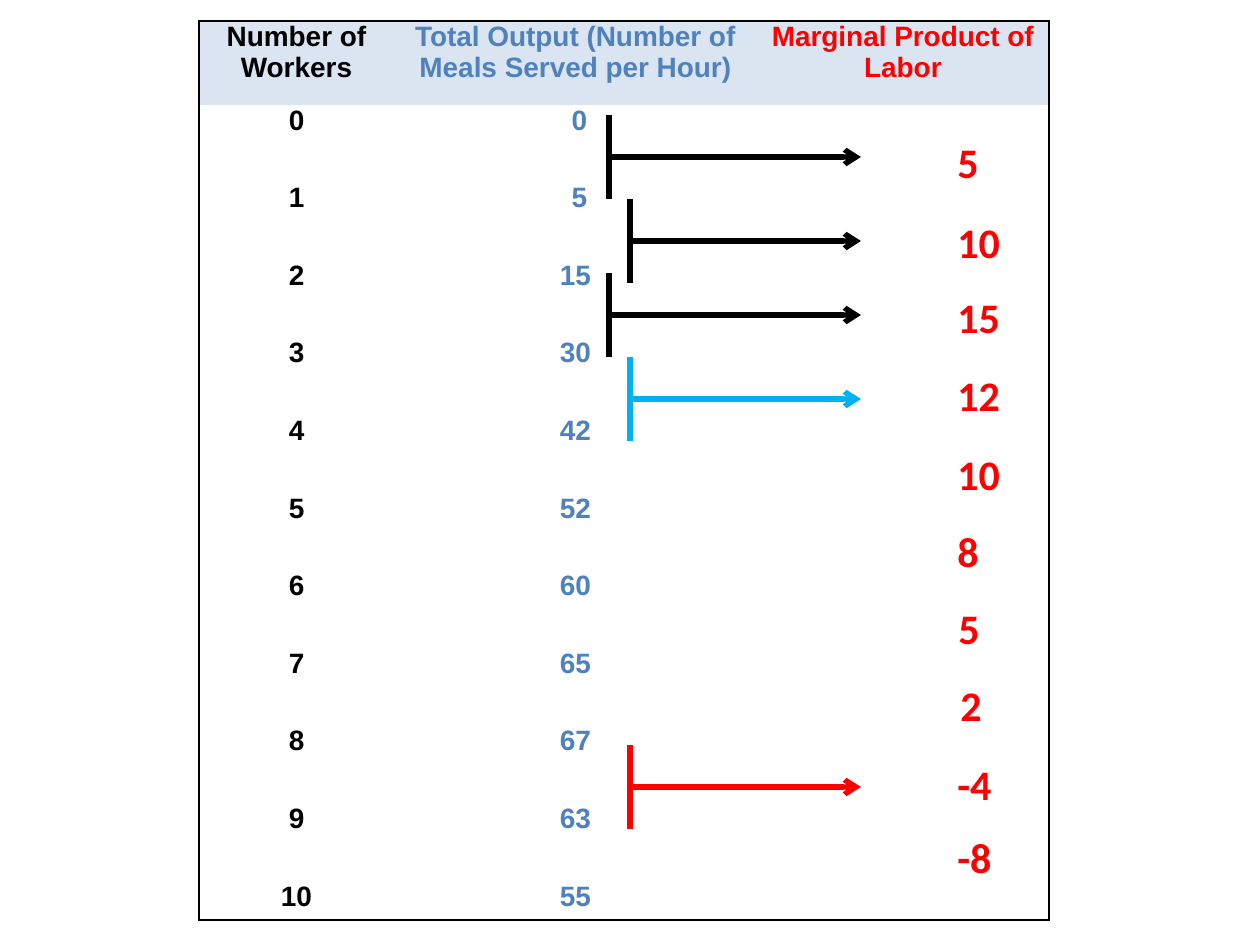
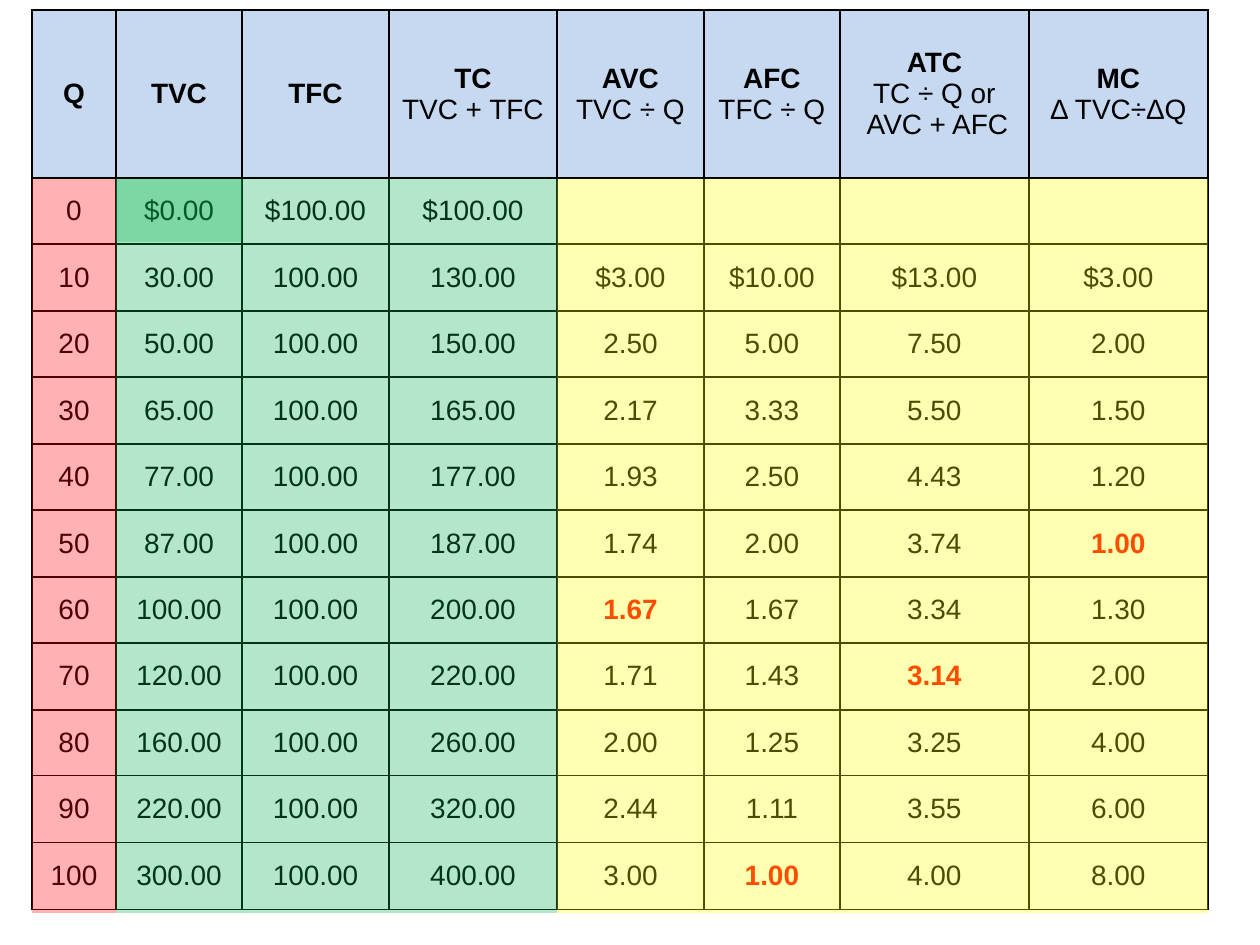
from itertools import accumulate

from lxml import etree
from pptx import Presentation
from pptx import util as u
from pptx.dml.color import RGBColor
from pptx.enum import shapes, text
from pptx.oxml.ns import qn

PX = u.Inches(1) / 126
COLORS = {
    "black": "000000", "red": "FF0000", "blue": "4F81BD", "sky": "00B0F0",
    "green": "00B050", "yellow": "FFFF00", "pale": "DBE5F1", "header": "C6D9F1",
}
NO_STYLE = "{2D5ABB26-0587-4C30-8999-92F81FD0307C}"


def px(n):
    return round(n * PX)


def rgb(name):
    return RGBColor.from_string(COLORS[name])


def split_evenly(total, count):
    """Whole-px heights that add up to total."""
    return [total * (i + 1) // count - total * i // count for i in range(count)]


class Deck:
    def __init__(self):
        self.prs = Presentation()
        self.prs.slide_width, self.prs.slide_height = px(1260), px(945)
        self.s = None

    def new_slide(self):
        self.s = self.prs.slides.add_slide(self.prs.slide_layouts[6])

    def style(self, p, size, font, color, bold):
        f = p.font
        f.size, f.name, f.bold = u.Pt(size), font, bold
        f.color.rgb = rgb(color)

    def table(self, x, y, cols, rows):
        sp = self.s.shapes.add_table(len(rows), len(cols), px(x), px(y),
                                     px(sum(cols)), px(sum(rows)))
        next(sp.element.iter(qn("a:tableStyleId"))).text = NO_STYLE
        tbl = sp.table
        tbl.first_row = tbl.horz_banding = False
        for col, width in zip(tbl.columns, cols):
            col.width = px(width)
        for row, height in zip(tbl.rows, rows):
            row.height = px(height)
        return tbl

    def cell(self, cell, lines, sides, inset, fill=None, color="black",
             bold=(False,), anchor=text.MSO_ANCHOR.TOP):
        """bold gives one flag a line; the last flag holds for the rest."""
        cell.margin_left = cell.margin_right = px(inset)
        cell.margin_top = cell.margin_bottom = 0
        cell.vertical_anchor = anchor
        self.borders(cell, sides)
        if fill:
            cell.fill.solid()
            cell.fill.fore_color.rgb = rgb(fill)
        else:
            cell.fill.background()
        tf = cell.text_frame
        tf.text = lines
        for i, p in enumerate(tf.paragraphs):
            p.alignment = text.PP_ALIGN.CENTER
            self.style(p, 16, "Arial", color, bold[min(i, len(bold) - 1)])

    def borders(self, cell, sides):
        tcPr = cell._tc.get_or_add_tcPr()
        for side in sides:
            ln = etree.SubElement(tcPr, qn("a:ln" + side), w=str(u.Pt(1)))
            solid = etree.SubElement(ln, qn("a:solidFill"))
            etree.SubElement(solid, qn("a:srgbClr"), val=COLORS["black"])

    def line(self, parent, start, end, color, arrow=False):
        sp = parent.shapes.add_connector(shapes.MSO_CONNECTOR.STRAIGHT,
                                         *map(px, start + end))
        sp.line.width = u.Pt(3)
        sp.line.color.rgb = rgb(color)
        spPr = sp.element.spPr
        if arrow:
            etree.SubElement(spPr.find(qn("a:ln")), qn("a:tailEnd"), type="arrow")
        etree.SubElement(spPr, qn("a:effectLst"))

    def bracket(self, x, y, color):
        """A vertical bar with an arrow from its middle."""
        group = self.s.shapes.add_group_shape()
        self.line(group, (x, y), (x, y + 84), color)
        self.line(group, (x, y + 42), (861, y + 42), color, arrow=True)

    def label(self, x, y, w, words):
        sp = self.s.shapes.add_textbox(px(x), px(y), px(w), px(64))
        tf = sp.text_frame
        tf.word_wrap = False
        tf.auto_size = text.MSO_AUTO_SIZE.SHAPE_TO_FIT_TEXT
        tf.text = words
        self.style(tf.paragraphs[0], 24, "Calibri", "red", True)

    def tint(self, x, y, w, h, color):
        sp = self.s.shapes.add_shape(shapes.MSO_SHAPE.RECTANGLE,
                                     px(x), px(y), px(w), px(h))
        sp.shadow.inherit = False
        sp.line.fill.background()
        sp.fill.solid()
        sp.fill.fore_color.rgb = rgb(color)
        clr = sp.element.spPr.find(qn("a:solidFill")).find(qn("a:srgbClr"))
        etree.SubElement(clr, qn("a:alpha"), val="30000")


def labor_slide(deck):
    deck.new_slide()

    # Workers and output table, framed on the outside only
    heads = ["Number of Workers", "Total Output (Number of Meals Served per Hour)",
             "Marginal Product of Labor"]
    output = [" 0", " 5", 15, 30, 42, 52, 60, 65, 67, 63, 55]
    rows = [heads] + [[n, meals, ""] for n, meals in enumerate(output)]
    tbl = deck.table(199, 21, [195, 363, 292], [84] + split_evenly(776, 10) + [39])
    for r, row in enumerate(rows):
        for c, value in enumerate(row):
            sides = ("L" * (c == 0) + "R" * (c == 2)
                     + "T" * (r == 0) + "B" * (r == len(rows) - 1))
            deck.cell(tbl.cell(r, c), str(value), sides, 9,
                      fill=None if r else "pale",
                      color=("black", "blue", "red")[c], bold=(True,))

    # Brackets between successive outputs
    for x, y, color in [(609, 115, "black"), (630, 199, "black"), (609, 273, "black"),
                        (630, 357, "sky"), (630, 745, "red")]:
        deck.bracket(x, y, color)

    # Marginal products
    widths = {"5": 47, "8": 47, "2": 47, "-4": 60, "-8": 60}
    for x, y, words in [(945, 130, "5"), (945, 210, "10"), (945, 285, "15"),
                        (945, 363, "12"), (945, 442, "10"), (945, 519, "8"),
                        (946, 596, "5"), (948, 673, "2"), (945, 752, "-4"),
                        (945, 825, "-8")]:
        deck.label(x, y, widths.get(words, 68), words)


COST_HEADS = ["Q", "TVC", "TFC", "TC\nTVC + TFC", "AVC\nTVC ÷ Q", "AFC\nTFC ÷ Q",
              "ATC\nTC ÷ Q or\n AVC + AFC", "MC\nΔ TVC÷ΔQ"]
COSTS = """\
0 $0.00 $100.00 $100.00
10 30.00 100.00 130.00 $3.00 $10.00 $13.00 $3.00
20 50.00 100.00 150.00 2.50 5.00 7.50 2.00
30 65.00 100.00 165.00 2.17 3.33 5.50 1.50
40 77.00 100.00 177.00 1.93 2.50 4.43 1.20
50 87.00 100.00 187.00 1.74 2.00 3.74 1.00
60 100.00 100.00 200.00 1.67 1.67 3.34 1.30
70 120.00 100.00 220.00 1.71 1.43 3.14 2.00
80 160.00 100.00 260.00 2.00 1.25 3.25 4.00
90 220.00 100.00 320.00 2.44 1.11 3.55 6.00
100 300.00 100.00 400.00 3.00 1.00 4.00 8.00"""
MINIMUMS = {(6, 7), (7, 4), (8, 6), (11, 5)}  # (row, column)


def cost_slide(deck):
    deck.new_slide()
    left, cols = 32, [84, 126, 147, 168, 147, 136, 189, 179]

    # Cost table
    rows = [COST_HEADS] + [line.split() for line in COSTS.splitlines()]
    tbl = deck.table(left, 10, cols, [168] + split_evenly(732, 11))
    for r, row in enumerate(rows):
        for c in range(len(cols)):
            lowest = (r, c) in MINIMUMS
            deck.cell(tbl.cell(r, c), row[c] if c < len(row) else "", "LRTB", 8,
                      fill=None if r else "header",
                      color="red" if lowest else "black",
                      bold=(lowest,) if r else (True, False),
                      anchor=text.MSO_ANCHOR.MIDDLE)

    # Tints: quantity, totals, then averages below a band over the empty cells
    top, band, bottom = 179, 63, 913
    xs = list(accumulate(cols, initial=left))
    deck.tint(xs[0], top, cols[0], bottom - top, "red")
    deck.tint(xs[1], top, cols[1], band, "green")
    for c in range(1, 4):
        deck.tint(xs[c], top, cols[c], bottom - top, "green")
    deck.tint(xs[4], top, sum(cols[4:]), band, "yellow")
    for c in range(4, 8):
        deck.tint(xs[c], top + band, cols[c], bottom - top - band, "yellow")


def main():
    deck = Deck()
    labor_slide(deck)
    cost_slide(deck)
    deck.prs.save("out.pptx")


if __name__ == "__main__":
    main()
